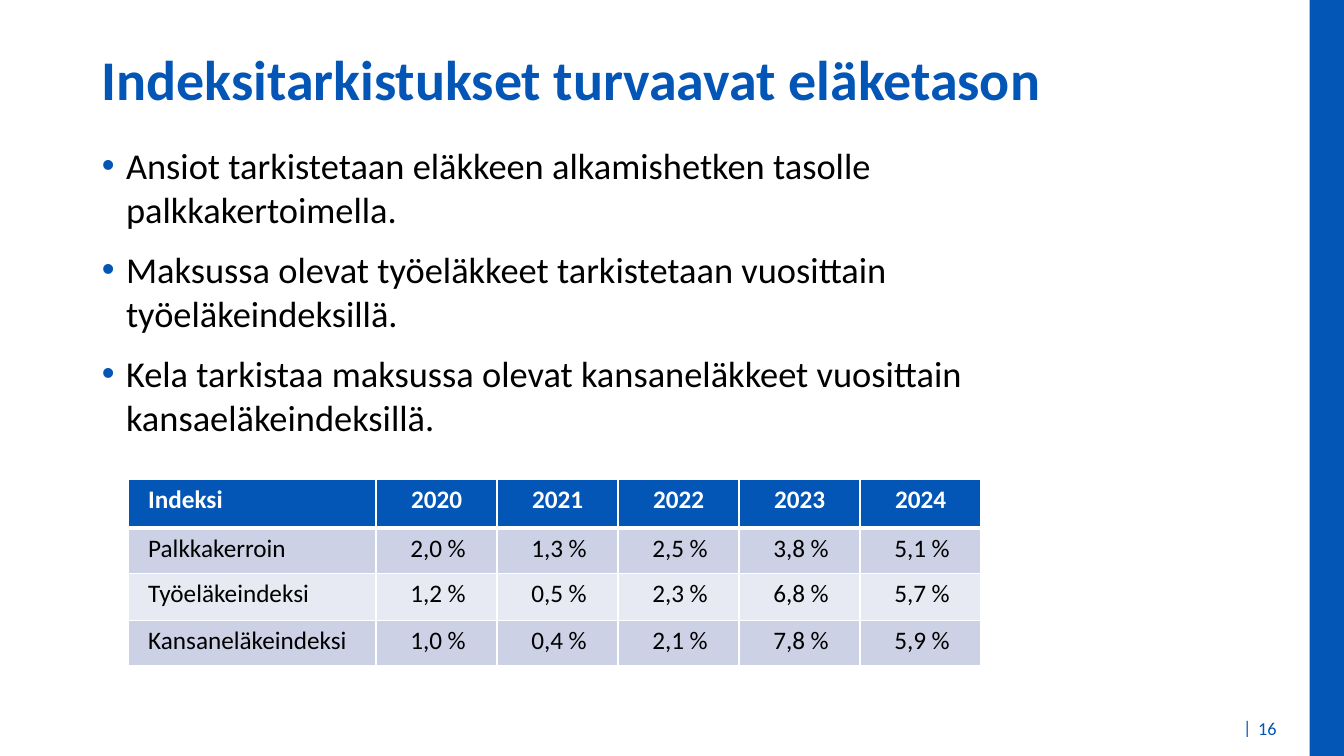
from lxml import etree
from pptx import Presentation
from pptx.dml.color import RGBColor
from pptx.enum import shapes, text
from pptx.oxml import ns
from pptx.util import Emu, Pt

PX = 9144
COLORS = {"blue": "0356B5", "black": "000000", "white": "FFFFFF",
          "odd": "CCD1E5", "even": "E7E9F3"}
ALIGN = text.PP_ALIGN
HEADER = ["Indeksi", "2020", "2021", "2022", "2023", "2024"]
INDEXES = [
    ["Palkkakerroin", "2,0 %", "1,3 %", "2,5 %", "3,8 %", "5,1 %"],
    ["Työeläkeindeksi", "1,2 %", "0,5 %", "2,3 %", "6,8 %", "5,7 %"],
    ["Kansaneläkeindeksi", "1,0 %", "0,4 %", "2,1 %", "7,8 %", "5,9 %"],
]
POINTS = [
    "Ansiot tarkistetaan eläkkeen alkamishetken tasolle palkkakertoimella.",
    "Maksussa olevat työeläkkeet tarkistetaan vuosittain työeläkeindeksillä.",
    "Kela tarkistaa maksussa olevat kansaneläkkeet vuosittain kansaeläkeindeksillä.",
]


def px(length):
    """Turn whole px into EMU."""
    return Emu(length * PX)


def rgb(name):
    """Look up a named colour."""
    return RGBColor.from_string(COLORS[name])


def apply(target, values):
    """Set every attribute in a dict of format values."""
    for name, value in values.items():
        setattr(target, name, value)


def place(part, box):
    """Move a shape to a px box."""
    apply(part, dict(zip(("left", "top", "width", "height"), map(px, box))))


def style(paragraph, size, color, bold=False, **layout):
    """Format the font and layout of one paragraph."""
    apply(paragraph, layout)
    apply(paragraph.font, {"size": Pt(size), "name": "Calibri", "bold": bold})
    paragraph.font.color.rgb = rgb(color)


def child(parent, tag, **attributes):
    """Append a drawing element."""
    return etree.SubElement(parent, ns.qn(tag), attributes)


def add_title(slide, box, wording):
    """Fill the title placeholder."""
    title = slide.shapes.title
    place(title, box)
    apply(title.text_frame, {"text": wording, "word_wrap": True,
                             "auto_size": text.MSO_AUTO_SIZE.NONE,
                             "vertical_anchor": text.MSO_ANCHOR.TOP})
    style(title.text_frame.paragraphs[0], 40, "blue", True, alignment=ALIGN.LEFT)


def add_points(slide, box, points):
    """Fill the body placeholder with a bulleted list."""
    body = slide.placeholders[1]
    place(body, box)
    apply(body.text_frame, {"text": "\n".join(points), "word_wrap": True,
                            "auto_size": text.MSO_AUTO_SIZE.NONE})
    for point in body.text_frame.paragraphs:
        properties = point._p.get_or_add_pPr()
        apply_indent = {"marL": str(px(24)), "indent": str(px(-24))}
        for name, value in apply_indent.items():
            properties.set(name, value)
        child(child(properties, "a:buClr"), "a:srgbClr", val=COLORS["blue"])
        child(properties, "a:buFont", typeface="Arial")
        child(properties, "a:buChar", char="•")
        style(point, 26, "black", space_before=Pt(0), space_after=Pt(12))


def add_borders(cell, top, bottom):
    """Draw white cell borders, with widths in points above and below."""
    widths = {"a:lnL": 1, "a:lnR": 1, "a:lnT": top, "a:lnB": bottom}
    for side, width in widths.items():
        line = child(cell._tc.get_or_add_tcPr(), side, w=str(Pt(width)))
        child(child(line, "a:solidFill"), "a:srgbClr", val=COLORS["white"])


def add_index_table(slide, box, rows):
    """Build the table of yearly index changes."""
    table = slide.shapes.add_table(len(rows), len(rows[0]), *map(px, box)).table
    for column, width in zip(table.columns, [246] + [120] * 5):
        column.width = px(width)
    for row, height in zip(table.rows, [48, 45, 47, 44]):
        row.height = px(height)
    for r, row in enumerate(rows):
        heading = r == 0
        fill = "blue" if heading else "odd" if r % 2 else "even"
        for c, wording in enumerate(row):
            cell = table.cell(r, c)
            add_borders(cell, 3 if r == 1 else 1, 3 if heading else 1)
            cell.fill.solid()
            cell.fill.fore_color.rgb = rgb(fill)
            value = c > 0 and not heading
            apply(cell, {"text": wording,
                         "margin_left": px(8 if c else 20),
                         "margin_right": px(31 if value else 8),
                         "margin_top": px(5), "margin_bottom": px(5)})
            side = ALIGN.RIGHT if value else ALIGN.CENTER if c else ALIGN.LEFT
            style(cell.text_frame.paragraphs[0], 18,
                  "white" if heading else "black", heading, alignment=side)


def add_side_band(slide, box):
    """Draw the blue band at the right edge."""
    band = slide.shapes.add_shape(shapes.MSO_SHAPE.RECTANGLE, *map(px, box))
    band.shadow.inherit = False
    band.fill.solid()
    band.fill.fore_color.rgb = rgb("blue")
    band.line.fill.background()


def add_page_number(slide, box, number):
    """Write the divider and the page number side by side."""
    left, top, width, height = box
    divider = slide.shapes.add_textbox(*map(px, (left, top + 1, 29, height)))
    page = slide.shapes.add_textbox(*map(px, (left + 15, top, width - 15, height)))
    apply(divider.text_frame, {"text": "|", "word_wrap": False})
    apply(page.text_frame, {"text": number, "word_wrap": True,
                            "vertical_anchor": text.MSO_ANCHOR.MIDDLE})
    for part in (divider, page):
        style(part.text_frame.paragraphs[0], 13, "blue")


def main():
    """Build and save the slide."""
    deck = Presentation()
    apply(deck, {"slide_width": px(1333), "slide_height": px(750)})
    slide = deck.slides.add_slide(deck.slide_layouts[1])
    add_side_band(slide, (1299, 0, 34, 750))
    add_page_number(slide, (1223, 705, 59, 35), "16")
    add_title(slide, (91, 39, 1043, 97), "Indeksitarkistukset turvaavat eläketason")
    add_points(slide, (91, 137, 1043, 309), POINTS)
    add_index_table(slide, (127, 476, 846, 184), [HEADER] + INDEXES)
    deck.save("out.pptx")


if __name__ == "__main__":
    main()
